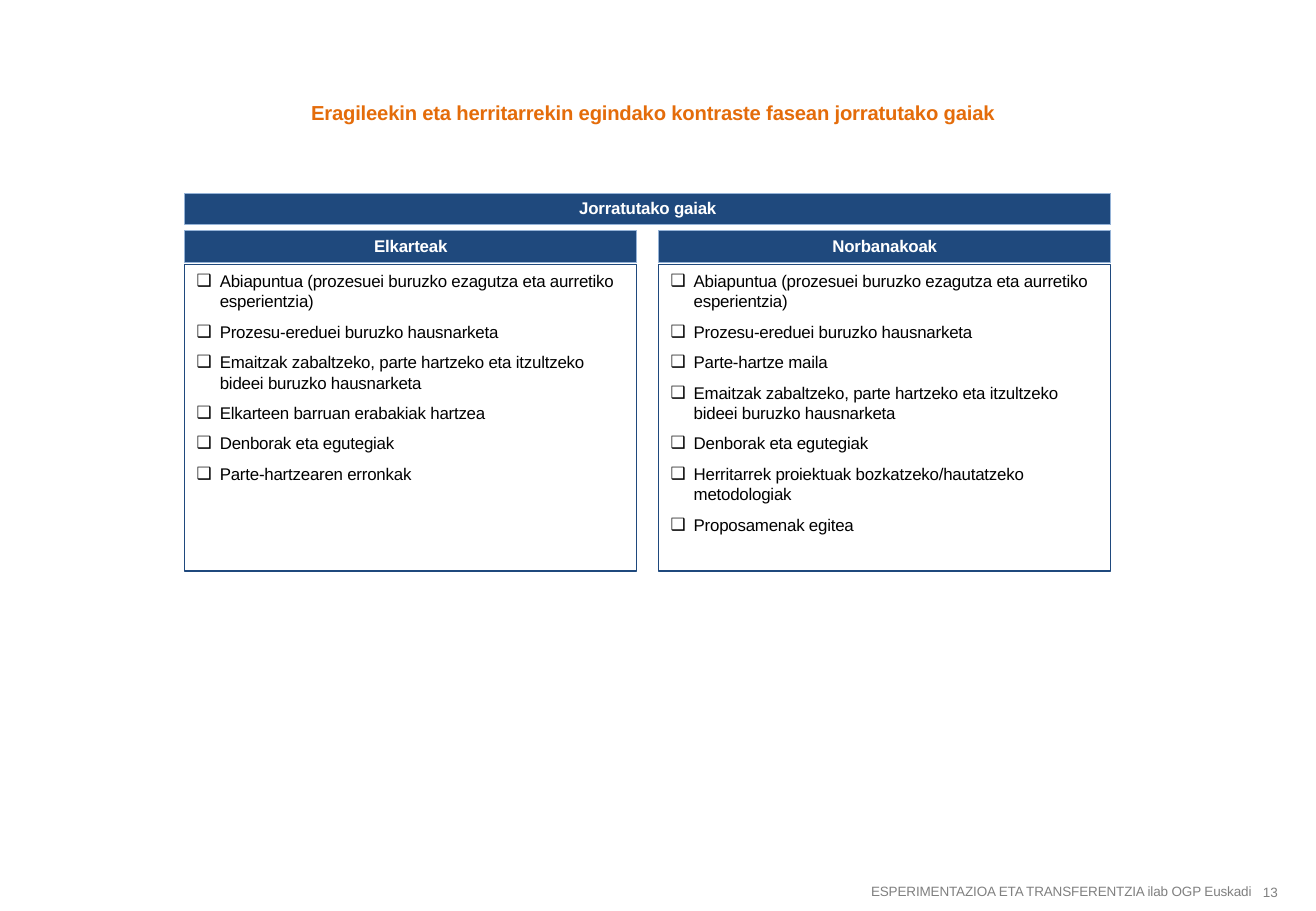
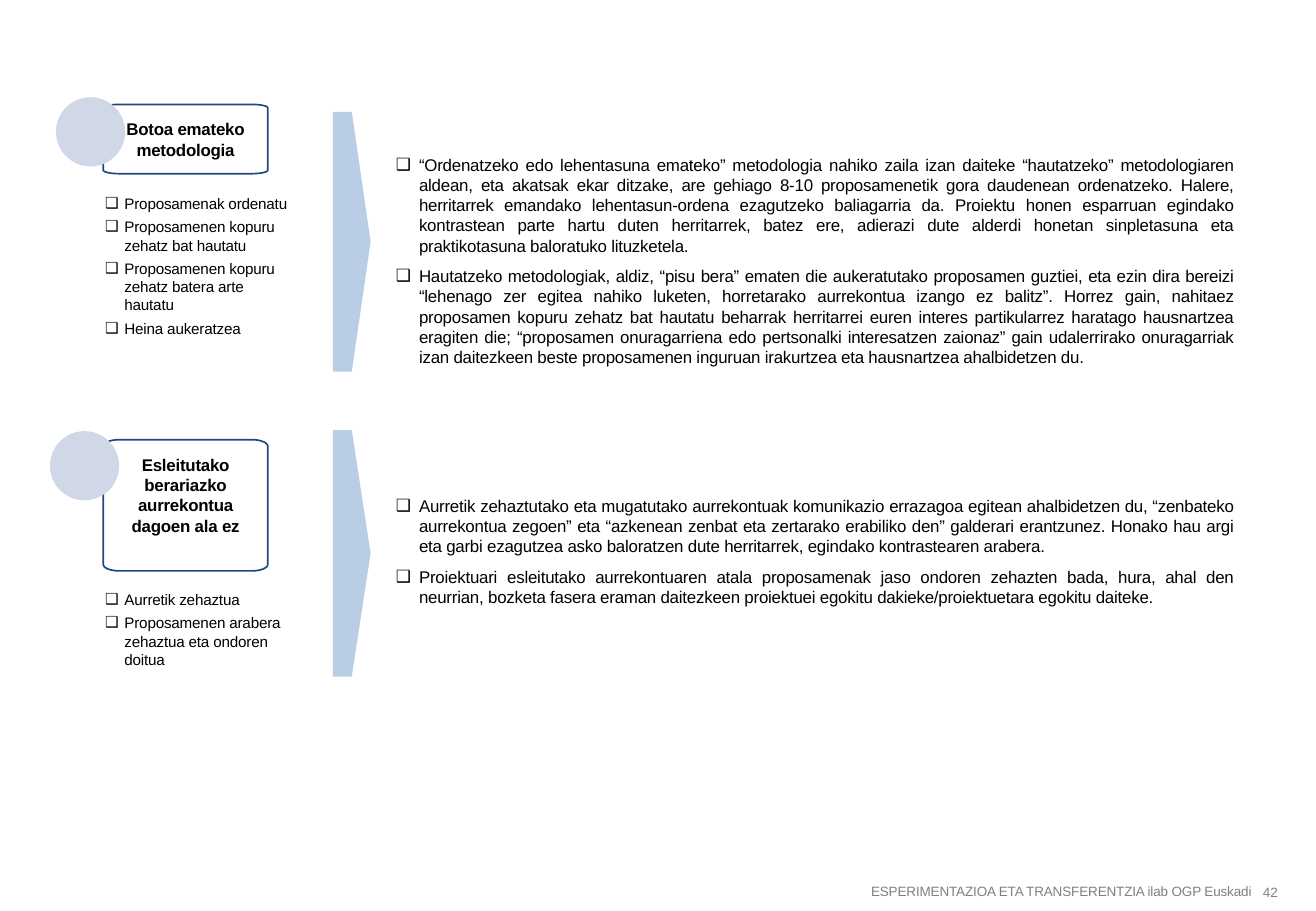
import math
import pptx
import pptx.util
import pptx.dml.color
import pptx.enum.shapes
import pptx.enum.text
import lxml.etree

prs = pptx.Presentation()
prs.slide_width = pptx.util.Inches(10.83)
prs.slide_height = pptx.util.Inches(7.5)
COL, ROW = prs.slide_width / 100, prs.slide_height / 100  # grid of 100 by 100

NAVY, ORANGE, GREY, BLACK, WHITE = "1F497D", "E46C0A", "808080", "000000", "FFFFFF"
EDGE, PLATE, DOT = "95B3D7", "B9CDE5", "D0D8E8"
SHAPE = pptx.enum.shapes.MSO_SHAPE
ALIGN = pptx.enum.text.PP_ALIGN
ANCHOR = pptx.enum.text.MSO_ANCHOR


def rgb(hex_color):
    return pptx.dml.color.RGBColor.from_string(hex_color)


def put(s, box, *texts, kind=None, outline=None, fill=None, line=None, width=0.75,
        size=10, color=BLACK, bold=False, align=ALIGN.LEFT, anchor=ANCHOR.TOP,
        inset=(0.1, 0.05), after=0, hang=0):
    """Place texts, one per paragraph, in a text box, preset shape or outline."""
    x, y, w, h = (round(v * unit) for v, unit in zip(box, (COL, ROW, COL, ROW)))
    if outline:
        points = [(round(px * COL), round(py * ROW)) for px, py in outline]
        builder = s.shapes.build_freeform(*points[0])
        builder.add_line_segments(points[1:], close=True)
        sp = builder.convert_to_shape()
    elif kind:
        sp = s.shapes.add_shape(kind, x, y, w, h)
    else:
        sp = s.shapes.add_textbox(x, y, w, h)
    if fill:
        sp.shadow.inherit = False
        sp.fill.solid()
        sp.fill.fore_color.rgb = rgb(fill)
        if line:
            sp.line.color.rgb = rgb(line)
            sp.line.width = pptx.util.Pt(width)
        else:
            sp.line.fill.background()
    tf = sp.text_frame
    tf.word_wrap = True
    tf.vertical_anchor = anchor
    tf.margin_left = tf.margin_right = pptx.util.Inches(inset[0])
    tf.margin_top = tf.margin_bottom = pptx.util.Inches(inset[1])
    for i, text in enumerate(texts):
        p = tf.add_paragraph() if i else tf.paragraphs[0]
        p.alignment = align
        p.space_after = pptx.util.Pt(after)
        if hang:
            pPr = p._p.get_or_add_pPr()
            pPr.set("marL", str(pptx.util.Inches(hang)))
            pPr.set("indent", str(-pptx.util.Inches(hang)))
            for tag, key, value in (("buFont", "typeface", "Arial"), ("buChar", "char", "❑")):
                lxml.etree.SubElement(pPr, pptx.oxml.ns.qn("a:" + tag)).set(key, value)
        r = p.add_run()
        r.text = text
        r.font.name = "Arial"
        r.font.size = pptx.util.Pt(size)
        r.font.bold = bold
        r.font.color.rgb = rgb(color)
        r._r.get_or_add_rPr().set("spc", "-10")


# Formats used on both slides
footer = dict(size=8, color=GREY, align=ALIGN.CENTER, anchor=ANCHOR.MIDDLE)
header = dict(kind=SHAPE.RECTANGLE, fill=NAVY, line=EDGE, color=WHITE, bold=True,
              align=ALIGN.CENTER, inset=(0.04, 0.04))
bullets = dict(after=6, hang=0.19)

# Blank slides with footer and page number
slides = []
for number in ("13", "42"):
    s = prs.slides.add_slide(prs.slide_layouts[6])
    put(s, (64.08, 96.13, 33.15, 3.33), "ESPERIMENTAZIOA ETA TRANSFERENTZIA ilab OGP Euskadi", **footer)
    put(s, (94.37, 96.67, 4.34, 2.53), number, **footer)
    slides.append(s)
topics_slide, methods_slide = slides

# Topics slide: title and two columns under one header
put(topics_slide, (5.63, 10.4, 88, 4.13),
    "Eragileekin eta herritarrekin egindako kontraste fasean jorratutako gaiak",
    size=12, color=ORANGE, bold=True, align=ALIGN.CENTER)

left, column, step, bar = 14.04, 34.35, 36.01, 3.47
topics = {
    "Elkarteak": (
        "Abiapuntua (prozesuei buruzko ezagutza eta aurretiko esperientzia)",
        "Prozesu-ereduei buruzko hausnarketa",
        "Emaitzak zabaltzeko, parte hartzeko eta itzultzeko bideei buruzko hausnarketa",
        "Elkarteen barruan erabakiak hartzea",
        "Denborak eta egutegiak",
        "Parte-hartzearen erronkak",
    ),
    "Norbanakoak": (
        "Abiapuntua (prozesuei buruzko ezagutza eta aurretiko esperientzia)",
        "Prozesu-ereduei buruzko hausnarketa",
        "Parte-hartze maila",
        "Emaitzak zabaltzeko, parte hartzeko eta itzultzeko bideei buruzko hausnarketa",
        "Denborak eta egutegiak",
        "Herritarrek proiektuak bozkatzeko/hautatzeko metodologiak",
        "Proposamenak egitea",
    ),
}
put(topics_slide, (left, 21.2, step + column, bar), "Jorratutako gaiak", **header)
for i, (group, items) in enumerate(topics.items()):
    x = left + i * step
    put(topics_slide, (x, 25.33, column, bar), group, **header)
    put(topics_slide, (x, 29.07, column, 33.6), *items,
        kind=SHAPE.RECTANGLE, fill=WHITE, line=NAVY, **bullets)

# Methods slide: each row has a card, its options, an arrow plate and findings
rows = [
    dict(
        title=("Botoa emateko", "metodologia"), card=(11.47, 7.6), dot=(4.25, 10.67),
        plate=(12.27, 28.53), choice=(20.67, 19.2), note=(16.27, 24.93),
        options=("Proposamenak ordenatu", "Proposamenen kopuru zehatz bat hautatu",
                 "Proposamenen kopuru zehatz batera arte hautatu", "Heina aukeratzea"),
        findings=(
            "“Ordenatzeko edo lehentasuna emateko” metodologia nahiko zaila izan daiteke "
            "“hautatzeko” metodologiaren aldean, eta akatsak ekar ditzake, are gehiago 8-10 "
            "proposamenetik gora daudenean ordenatzeko. Halere, herritarrek emandako "
            "lehentasun-ordena ezagutzeko baliagarria da. Proiektu honen esparruan egindako "
            "kontrastean parte hartu duten herritarrek, batez ere, adierazi dute alderdi "
            "honetan sinpletasuna eta praktikotasuna baloratuko lituzketela.",
            "Hautatzeko metodologiak, aldiz, “pisu bera” ematen die aukeratutako proposamen "
            "guztiei, eta ezin dira bereizi “lehenago zer egitea nahiko luketen, horretarako "
            "aurrekontua izango ez balitz”. Horrez gain, nahitaez proposamen kopuru zehatz bat "
            "hautatu beharrak herritarrei euren interes partikularrez haratago hausnartzea "
            "eragiten die; “proposamen onuragarriena edo pertsonalki interesatzen zaionaz” gain "
            "udalerrirako onuragarriak izan daitezkeen beste proposamenen inguruan irakurtzea "
            "eta hausnartzea ahalbidetzen du.",
        ),
    ),
    dict(
        title=("Esleitutako berariazko", "aurrekontua dagoen ala ez"), card=(48.27, 14.4),
        dot=(3.79, 47.33), plate=(47.2, 27.07), choice=(64.13, 10), note=(53.73, 13.73),
        options=("Aurretik zehaztua", "Proposamenen arabera zehaztua eta ondoren doitua"),
        findings=(
            "Aurretik zehaztutako eta mugatutako aurrekontuak komunikazio errazagoa egitean "
            "ahalbidetzen du, “zenbateko aurrekontua zegoen” eta “azkenean zenbat eta zertarako "
            "erabiliko den” galderari erantzunez. Honako hau argi eta garbi ezagutzea asko "
            "baloratzen dute herritarrek, egindako kontrastearen arabera.",
            "Proiektuari esleitutako aurrekontuaren atala proposamenak jaso ondoren zehazten "
            "bada, hura, ahal den neurrian, bozketa fasera eraman daitezkeen proiektuei egokitu "
            "dakieke/proiektuetara egokitu daiteke.",
        ),
    ),
]
card_x, card_w = 7.85, 12.5
for row in rows:
    put(methods_slide, (25.3, row["plate"][0], 2.86, row["plate"][1]),
        kind=SHAPE.PENTAGON, fill=PLATE)
    put(methods_slide, (29.18, row["note"][0], 65.47, row["note"][1]), *row["findings"],
        align=ALIGN.JUSTIFY, **bullets)
    put(methods_slide, (7.07, row["choice"][0], 16, row["choice"][1]), *row["options"],
        size=9, after=3, hang=0.16)

    # Card with flat elliptical corners, eight steps to each quarter turn
    y, h = row["card"]
    rx, ry = 1.2, h * 0.05
    outline = []
    for quarter, (cx, cy) in enumerate(((card_x + card_w - rx, y + h - ry), (card_x + rx, y + h - ry),
                                        (card_x + rx, y + ry), (card_x + card_w - rx, y + ry))):
        for k in range(9):
            angle = math.pi / 2 * (quarter + k / 8)
            outline.append((cx + rx * math.cos(angle), cy + ry * math.sin(angle)))
    put(methods_slide, (card_x, y, card_w, h), *row["title"], outline=outline, fill=WHITE,
        line=NAVY, width=1, bold=True, align=ALIGN.CENTER, inset=(0.12, 0.12))
    put(methods_slide, (*row["dot"], 5.26, 7.6), kind=SHAPE.OVAL, fill=DOT)

prs.save("out.pptx")
